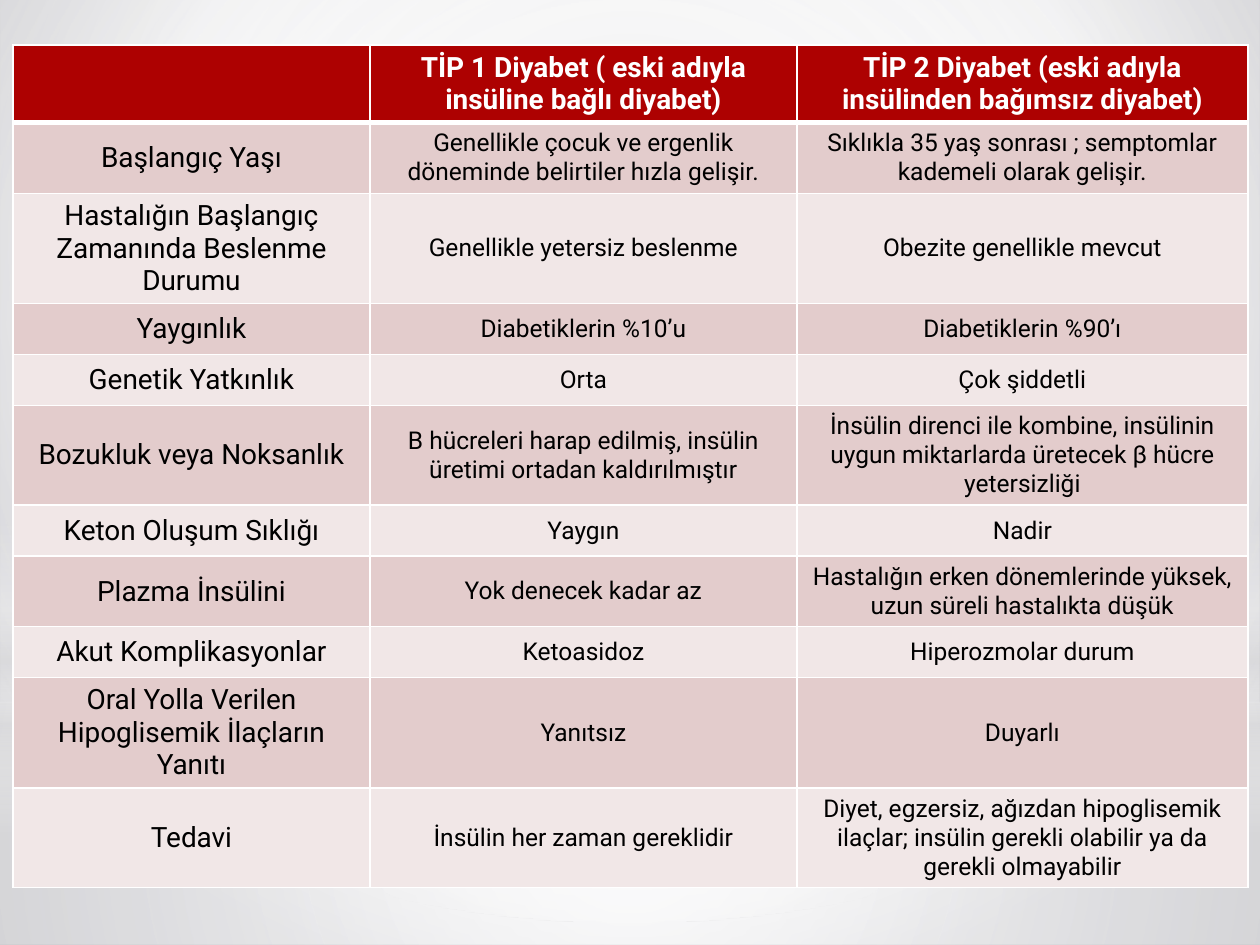
from lxml.etree import SubElement
from pptx import Presentation
from pptx.dml.color import RGBColor
from pptx.enum.shapes import MSO_SHAPE
from pptx.enum.text import MSO_ANCHOR, PP_ALIGN
from pptx.oxml.ns import qn
from pptx.util import Pt

PX = 914400 // 126
FONT = "Roboto"

WHITE = RGBColor(0xFF, 0xFF, 0xFF)
BLACK = RGBColor(0x00, 0x00, 0x00)
RED = RGBColor(0xAD, 0x01, 0x01)
ROSE = RGBColor(0xE3, 0xCC, 0xCC)
PALE_ROSE = RGBColor(0xF1, 0xE7, 0xE7)
SILVER = RGBColor(0xDE, 0xDE, 0xE0)
LIGHT_GRAY = RGBColor(0xD4, 0xD4, 0xD7)
GRAY = RGBColor(0xB0, 0xB0, 0xB7)

COLUMN_WIDTHS = [357, 427, 451]
ROW_HEIGHT = 51
TABLE_BOX = (13, 45, sum(COLUMN_WIDTHS), 856)
ROWS = [
    ("", "TİP 1 Diyabet ( eski adıyla insüline bağlı diyabet)",
     "TİP 2 Diyabet (eski adıyla insülinden bağımsız diyabet)"),
    ("Başlangıç Yaşı",
     "Genellikle çocuk ve ergenlik döneminde belirtiler hızla gelişir.",
     "Sıklıkla 35 yaş sonrası ; semptomlar kademeli olarak gelişir."),
    ("Hastalığın Başlangıç Zamanında Beslenme Durumu",
     "Genellikle yetersiz beslenme", "Obezite genellikle mevcut"),
    ("Yaygınlık", "Diabetiklerin %10’u", "Diabetiklerin %90’ı"),
    ("Genetik Yatkınlık", "Orta", "Çok şiddetli"),
    ("Bozukluk veya Noksanlık",
     "Β hücreleri harap edilmiş, insülin üretimi ortadan kaldırılmıştır",
     "İnsülin direnci ile kombine, insülinin uygun miktarlarda üretecek "
     "β hücre yetersizliği"),
    ("Keton Oluşum Sıklığı", "Yaygın", "Nadir"),
    ("Plazma İnsülini", "Yok denecek kadar az",
     "Hastalığın erken dönemlerinde yüksek, uzun süreli hastalıkta düşük"),
    ("Akut Komplikasyonlar", "Ketoasidoz", "Hiperozmolar durum"),
    ("Oral Yolla Verilen Hipoglisemik İlaçların Yanıtı", "Yanıtsız", "Duyarlı"),
    ("Tedavi", "İnsülin her zaman gereklidir",
     "Diyet, egzersiz, ağızdan hipoglisemik ilaçlar; insülin gerekli olabilir "
     "ya da gerekli olmayabilir"),
]

# Gradient stops: position in percent, colour, opacity in percent
BACKGROUND_STOPS = [(0, LIGHT_GRAY, 100), (60, WHITE, 100), (100, GRAY, 100)]
CENTER = (50, 50, 50, 50)
# Backdrop layers: preset, box, stops, focus (None makes it run downwards)
LAYERS = [
    (MSO_SHAPE.RECTANGLE, (0, 703, 1260, 242),
     [(0, WHITE, 91), (37, WHITE, 76), (100, SILVER, 79)], CENTER),
    (MSO_SHAPE.RECTANGLE, (0, 0, 1260, 703),
     [(0, WHITE, 89), (48, WHITE, 62), (100, SILVER, 79)], CENTER),
    (MSO_SHAPE.RECTANGLE, (0, 519, 1260, 315),
     [(0, WHITE, 0), (29, WHITE, 30), (45, SILVER, 40), (55, WHITE, 26),
      (65, SILVER, 60), (100, WHITE, 0)], None),
    (MSO_SHAPE.OVAL, (0, 220, 1260, 703),
     [(0, WHITE, 100), (56, WHITE, 0)], CENTER),
]


def scaled(box):
    return [length * PX for length in box]


def apply_gradient(properties, stops, focus):
    """Put a gradient in the place of the solid fill."""
    solid = properties.find(qn("a:solidFill"))
    gradient = SubElement(properties, qn("a:gradFill"), rotWithShape="1")
    stop_list = SubElement(gradient, qn("a:gsLst"))
    for position, color, opacity in stops:
        stop = SubElement(stop_list, qn("a:gs"), pos=str(position * 1000))
        tint = SubElement(stop, qn("a:srgbClr"), val=str(color))
        if opacity < 100:
            SubElement(tint, qn("a:alpha"), val=str(opacity * 1000))
    if focus:
        circle = SubElement(gradient, qn("a:path"), path="circle")
        sides = {side: str(inset * 1000) for side, inset in zip("ltrb", focus)}
        SubElement(circle, qn("a:fillToRect"), **sides)
    else:
        SubElement(gradient, qn("a:lin"), ang="5400000", scaled="0")
    properties.replace(solid, gradient)


def paint_background(page):
    page.background.fill.solid()
    properties = page.element.find(".//" + qn("p:bgPr"))
    apply_gradient(properties, BACKGROUND_STOPS, (20, 10, 20, 60))


def add_layer(page, preset, box, stops, focus):
    layer = page.shapes.add_shape(preset, *scaled(box))
    layer.shadow.inherit = False
    layer.line.fill.background()
    layer.fill.solid()
    apply_gradient(layer.element.spPr, stops, focus)


def set_borders(cell, widths):
    """Draw white borders; widths go by side in points."""
    properties = cell._tc.get_or_add_tcPr()
    for index, (side, width) in enumerate(widths.items()):
        line = SubElement(properties, qn("a:ln" + side), w=str(Pt(width)))
        fill = SubElement(line, qn("a:solidFill"))
        SubElement(fill, qn("a:srgbClr"), val=str(WHITE))
        properties.insert(index, line)


def fill_cell(cell, text, color, font_format):
    cell.fill.solid()
    cell.fill.fore_color.rgb = color
    cell.vertical_anchor = MSO_ANCHOR.MIDDLE
    para = cell.text_frame.paragraphs[0]
    para.alignment = PP_ALIGN.CENTER
    if text:
        span = para.add_run()
        span.text = text
        span.font.color.rgb = WHITE if font_format["bold"] else BLACK
        for name, value in font_format.items():
            setattr(span.font, name, value)


def add_comparison_table(page):
    frame = page.shapes.add_table(len(ROWS), len(COLUMN_WIDTHS), *scaled(TABLE_BOX))
    table = frame.table
    table.horz_banding = False
    for column, width in zip(table.columns, COLUMN_WIDTHS):
        column.width = width * PX
    for row_index, texts in enumerate(ROWS):
        table.rows[row_index].height = ROW_HEIGHT * PX
        is_header = row_index == 0
        color = RED if is_header else (PALE_ROSE, ROSE)[row_index % 2]
        borders = {"L": 1, "R": 1, "T": 3 if row_index == 1 else 1,
                   "B": 3 if is_header else 1}
        for column_index, text in enumerate(texts):
            cell = table.cell(row_index, column_index)
            large = is_header or column_index == 0
            font_format = {"name": FONT, "size": Pt(16 if large else 14),
                           "bold": is_header}
            fill_cell(cell, text, color, font_format)
            set_borders(cell, borders)
    # Rows grow with their text, so the frame is taller than their minimum
    frame.height = TABLE_BOX[3] * PX


def main():
    deck = Presentation()
    deck.slide_width, deck.slide_height = scaled((1260, 945))
    page = deck.slides.add_slide(deck.slide_layouts[6])
    paint_background(page)
    for layer in LAYERS:
        add_layer(page, *layer)
    add_comparison_table(page)
    deck.save("out.pptx")


if __name__ == "__main__":
    main()
